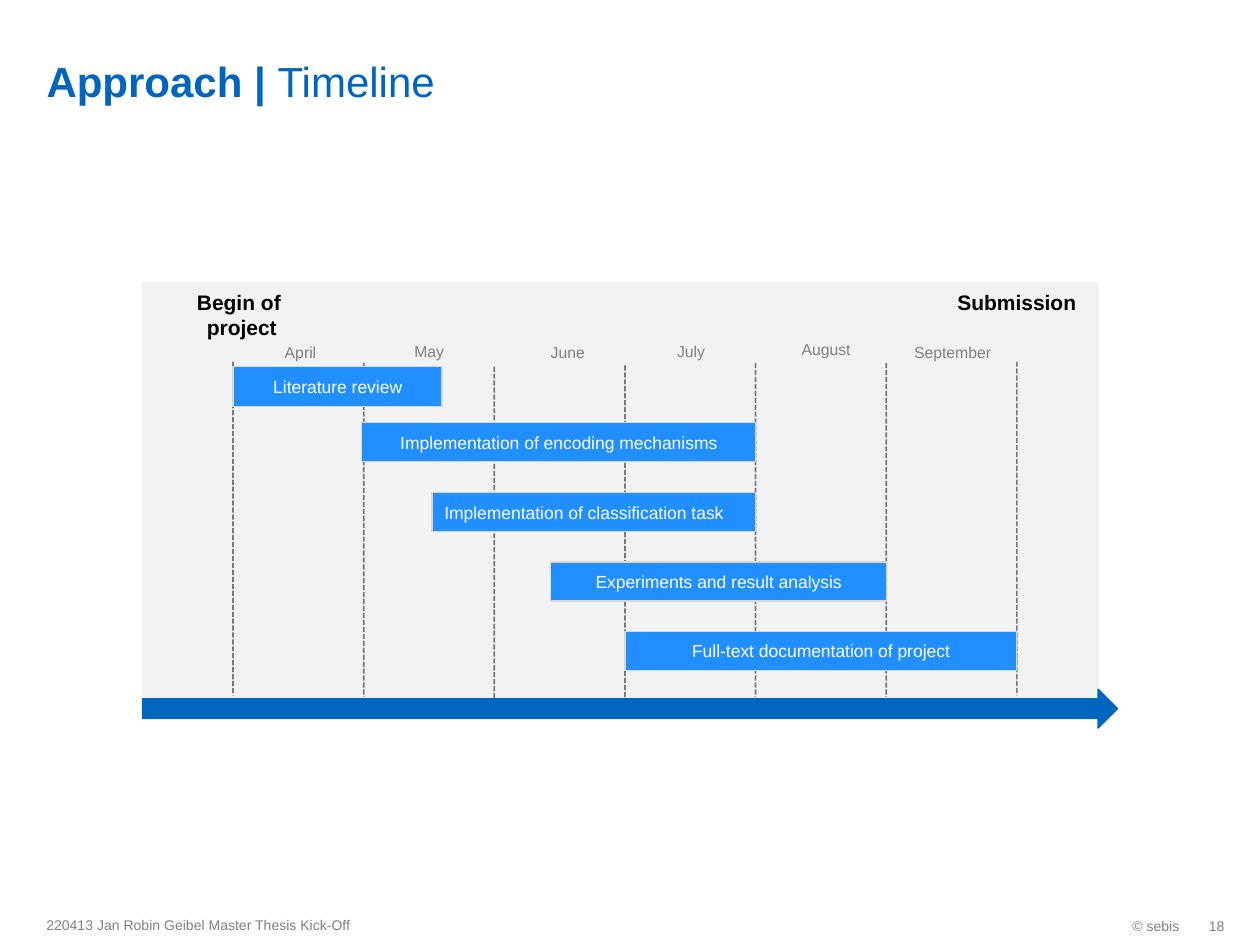
from pptx import Presentation
from pptx.dml.color import RGBColor
from pptx.enum.dml import MSO_LINE
from pptx.enum.shapes import MSO_CONNECTOR, MSO_SHAPE
from pptx.enum.text import MSO_ANCHOR as Anchor, MSO_AUTO_SIZE as AutoSize, PP_ALIGN as Align
from pptx.oxml.ns import qn
from pptx.util import Pt
from lxml.etree import SubElement

COLORS = {
    "blue": "0065BD", "bar": "218FFF", "bar_edge": "DAD7CB", "panel": "F2F2F2",
    "gray": "808080", "black": "000000", "white": "FFFFFF",
}
FORMATS = {
    "title": {"size": 24, "color": "blue", "bold": True},
    "title_light": {"size": 24, "color": "blue", "bold": False},
    "footer": {"size": 8, "color": "gray"},
    "milestone": {"size": 12, "color": "black", "bold": True},
    "month": {"size": 9, "color": "gray"},
    "bar": {"size": 10, "color": "white"},
}
CHART_LEFT = 133.2
MONTH_WIDTH = 74.65
GUIDE_HEIGHT = 190.8
GUIDE_TOPS = [206.6, 207.4, 209.5, 208.8, 207.4, 207.4, 206.6]
MONTHS = [
    ("April", 144.7, 192.2, 54), ("May", 218.2, 191.5, 54),
    ("June", 297.4, 192.2, 54), ("July", 367.9, 191.5, 54),
    ("August", 445, 190.8, 54), ("September", 514.1, 192.2, 60.5),
]
TASKS = [
    ("Literature review", 133.2, 209.5, 119.5, 23, Align.CENTER),
    ("Implementation of encoding mechanisms", 206.8, 241.6, 224.9, 22.3, Align.CENTER),
    ("Implementation of classification task", 246.8, 281.5, 185, 22.3, Align.LEFT),
    ("Experiments and result analysis", 314.6, 321.1, 192, 22.3, Align.CENTER),
    ("Full-text documentation of project", 357.1, 360.7, 224, 22.3, Align.CENTER),
]


class SlideBuilder:
    """Draws styled elements on the current slide, with lengths in points."""

    def __init__(self, presentation, font="Arial"):
        self.font = font
        self.slide = presentation.slides.add_slide(presentation.slide_layouts[5])

    def color(self, name):
        return RGBColor.from_string(COLORS[name])

    def run(self, paragraph, text, style):
        run = paragraph.add_run()
        run.text = text
        run.font.name = self.font
        values = dict(FORMATS[style])
        run.font.color.rgb = self.color(values.pop("color"))
        run.font.size = Pt(values.pop("size"))
        for name, value in values.items():
            setattr(run.font, name, value)

    def frame(self, shape, **values):
        for name, value in values.items():
            setattr(shape.text_frame, name, value)

    def title(self, box, parts):
        shape = self.slide.shapes.title
        shape.left, shape.top, shape.width, shape.height = map(Pt, box)
        self.frame(shape, word_wrap=True, auto_size=AutoSize.NONE,
                   vertical_anchor=Anchor.BOTTOM, margin_top=0, margin_bottom=0)
        paragraph = shape.text_frame.paragraphs[0]
        paragraph.alignment = Align.LEFT
        for text, style in parts:
            self.run(paragraph, text, style)

    def text(self, box, lines, style, align=Align.CENTER, **values):
        shape = self.slide.shapes.add_textbox(*map(Pt, box))
        self.frame(shape, **{"word_wrap": True, **values})
        for index, line in enumerate(lines):
            text_frame = shape.text_frame
            paragraph = text_frame.add_paragraph() if index else text_frame.paragraphs[0]
            paragraph.alignment = align
            self.run(paragraph, line, style)

    def shape(self, kind, box, fill, line):
        shape = self.slide.shapes.add_shape(kind, *map(Pt, box))
        shape.shadow.inherit = False
        shape.fill.solid()
        shape.fill.fore_color.rgb = self.color(fill)
        shape.line.color.rgb = self.color(line)
        shape.line.width = Pt(0.75)
        return shape

    def bar(self, text, box, align):
        shape = self.shape(MSO_SHAPE.RECTANGLE, box, "bar", "bar_edge")
        self.frame(shape, word_wrap=True, vertical_anchor=Anchor.MIDDLE)
        paragraph = shape.text_frame.paragraphs[0]
        paragraph.alignment = align
        self.run(paragraph, text, "bar")

    def guide(self, x, top, height):
        line = self.slide.shapes.add_connector(
            MSO_CONNECTOR.STRAIGHT, Pt(x), Pt(top), Pt(x), Pt(top + height))
        line.line.color.rgb = self.color("black")
        line.line.width = Pt(1)
        line.line.dash_style = MSO_LINE.SQUARE_DOT
        properties = line._element.spPr
        SubElement(next(properties.iter(qn("a:srgbClr"))), qn("a:alpha"), val="50000")
        SubElement(properties, qn("a:effectLst"))


def main():
    presentation = Presentation()
    presentation.slide_width, presentation.slide_height = Pt(720), Pt(540)
    builder = SlideBuilder(presentation)

    builder.title((19.4, 3.6, 593.3, 56.9),
                  [("Approach | ", "title"), ("Timeline", "title_light")])
    middle = {"vertical_anchor": Anchor.MIDDLE}
    builder.text((554.4, 517.7, 126.7, 23), ["© sebis"], "footer", Align.RIGHT,
                 word_wrap=False, **middle)
    builder.text((19.4, 517, 340.6, 23), ["220413 Jan Robin Geibel Master Thesis Kick-Off"],
                 "footer", Align.LEFT, **middle)
    builder.text((680.4, 517.7, 19.4, 23), ["18"], "footer", Align.RIGHT,
                 word_wrap=False, margin_right=0, **middle)

    builder.shape(MSO_SHAPE.RECTANGLE, (81.4, 161.3, 546.5, 247), "panel", "panel")
    builder.shape(MSO_SHAPE.RIGHT_ARROW, (81.4, 393.8, 557.3, 22.3), "blue", "blue")
    for index, top in enumerate(GUIDE_TOPS):
        builder.guide(CHART_LEFT + index * MONTH_WIDTH, top, GUIDE_HEIGHT)

    grow = {"auto_size": AutoSize.SHAPE_TO_FIT_TEXT}
    builder.text((105.1, 162, 66.2, 36), ["Begin of ", "project"], "milestone",
                 word_wrap=False, **grow)
    builder.text((539.3, 162, 83.5, 21.6), ["Submission"], "milestone",
                 word_wrap=False, **grow)
    for text, left, top, width, height, align in TASKS:
        builder.bar(text, (left, top, width, height), align)
    for month, left, top, width in MONTHS:
        builder.text((left, top, width, 18), [month], "month", **grow)

    presentation.save("out.pptx")


if __name__ == "__main__":
    main()
